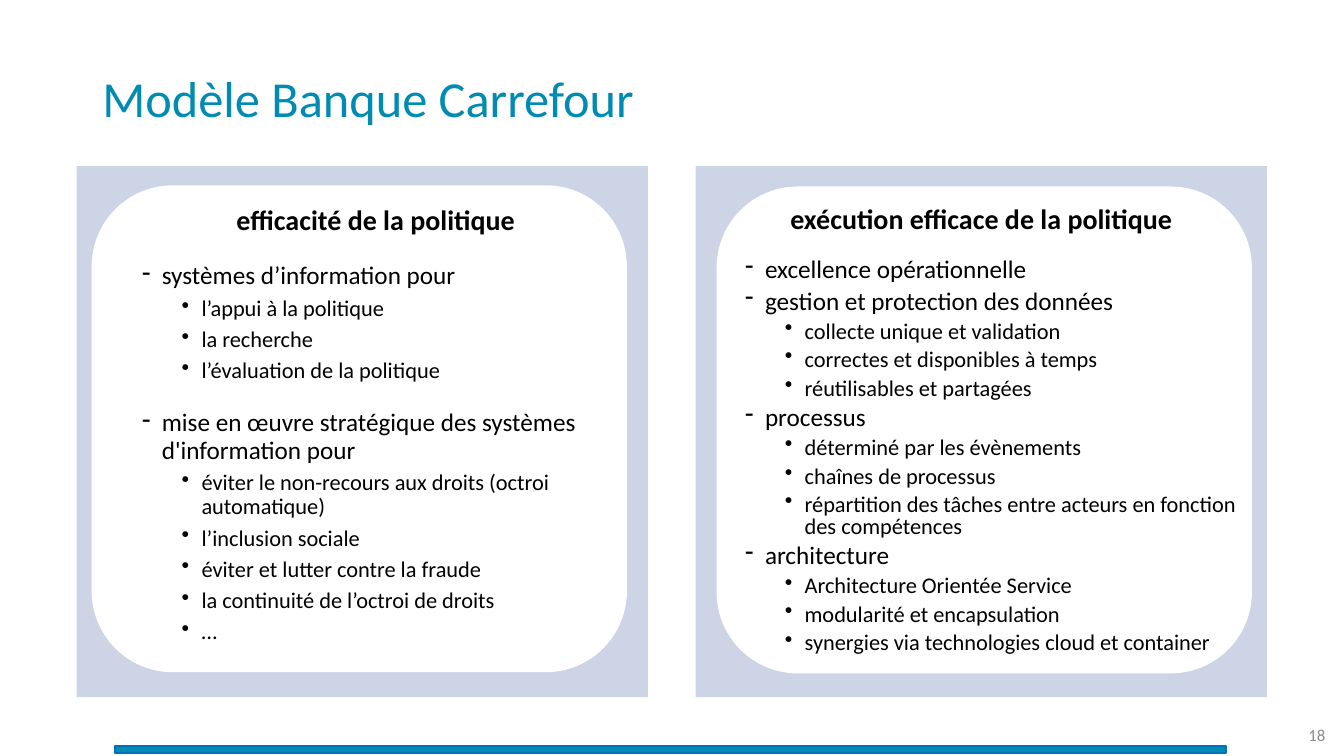
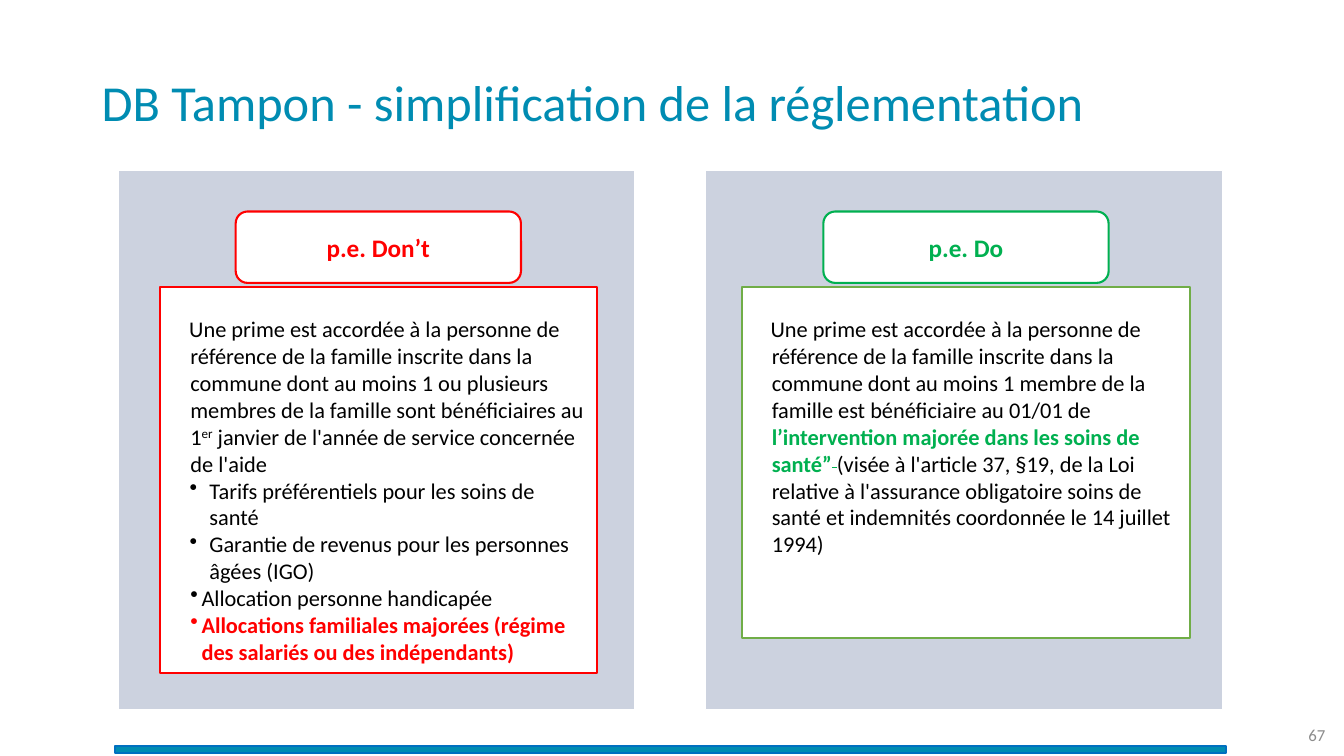
from dataclasses import dataclass, replace

from lxml import etree
from pptx import Presentation
from pptx.dml.color import RGBColor
from pptx.enum.shapes import MSO_SHAPE
from pptx.enum.text import MSO_ANCHOR, PP_ALIGN
from pptx.oxml.ns import qn
from pptx.util import Cm, Pt

RECTANGLE, ROUNDED = MSO_SHAPE.RECTANGLE, MSO_SHAPE.ROUNDED_RECTANGLE
TOP, MIDDLE = MSO_ANCHOR.TOP, MSO_ANCHOR.MIDDLE
LEFT, CENTER, RIGHT = PP_ALIGN.LEFT, PP_ALIGN.CENTER, PP_ALIGN.RIGHT

FONT = "Calibri"
COLORS = {
    "title": "008CB2",
    "bar_line": "0070C0",
    "number": "8C8C8C",
    "panel": "002B82",
    "rule_panel": "002060",
    "white": "FFFFFF",
    "text": "000000",
    "dont": "FF0000",
    "do": "00B050",
    "do_frame": "70AD47",
}


@dataclass(frozen=True)
class Area:
    left: float
    top: float
    width: float
    height: float


@dataclass(frozen=True)
class Span:
    text: str
    color: str = "text"
    bold: bool = False
    strike: bool = False
    superscript: bool = False


@dataclass(frozen=True)
class Style:
    size: float
    color: str = "text"
    bold: bool = False
    align: PP_ALIGN = LEFT
    indent: float = 0
    first: float = 0
    bullet: str = ""
    before: float = 0
    spacing: float = 1.0


@dataclass(frozen=True)
class Line:
    content: str | tuple[Span, ...]
    style: Style


@dataclass(frozen=True)
class Column:
    panel: Area
    card: Area
    body: Area
    lines: list[Line]


@dataclass(frozen=True)
class Example:
    panel_left: float
    label: str
    color: str
    frame: Area
    frame_color: str
    lines: list[Line]


TITLE = Style(36, "title", spacing=0.9)
NUMBER = Style(12, "number", align=RIGHT)
HEADING = Style(20, bold=True)
TOPIC = Style(18, indent=1.5, first=-0.5, bullet="-", before=5)
DETAIL = Style(16, indent=2.5, first=-0.5, bullet="•", before=5)
RULE = Style(16, indent=0.51, first=-0.03)
WIDE_BULLET = Style(16, indent=0.99, first=-0.5, bullet="•")
NARROW_BULLET = Style(16, indent=0.79, first=-0.28, bullet="•")


def rgb(name: str) -> RGBColor:
    return RGBColor.from_string(COLORS[name])


def write(frame, lines: list[Line], anchor: MSO_ANCHOR = TOP) -> None:
    frame.word_wrap = True
    frame.vertical_anchor = anchor
    for index, line in enumerate(lines):
        para = frame.add_paragraph() if index else frame.paragraphs[0]
        style = line.style
        properties = para._p.get_or_add_pPr()
        properties.set("marL", str(int(Cm(style.indent))))
        properties.set("indent", str(int(Cm(style.first))))
        if style.bullet:
            etree.SubElement(properties, qn("a:buChar")).set("char", style.bullet)
        para.alignment = style.align
        para.line_spacing = style.spacing
        para.space_before = Pt(style.before if index else 0)
        spans = line.content
        if isinstance(spans, str):
            spans = (Span(spans, style.color, style.bold),)
        for span in spans:
            run = para.add_run()
            run.text = span.text
            run.font.name = FONT
            run.font.size = Pt(style.size)
            run.font.bold = span.bold
            run.font.color.rgb = rgb(span.color)
            if span.strike:
                run._r.get_or_add_rPr().set("strike", "sngStrike")
            if span.superscript:
                run._r.get_or_add_rPr().set("baseline", "30000")


def add_text(page, area: Area, lines: list[Line], anchor: MSO_ANCHOR = TOP) -> None:
    box = page.shapes.add_textbox(
        Cm(area.left), Cm(area.top), Cm(area.width), Cm(area.height))
    write(box.text_frame, lines, anchor)


def add_box(page, kind: MSO_SHAPE, area: Area, fill: str, line: str = "",
            weight: float = 1, opacity: int = 100):
    box = page.shapes.add_shape(
        kind, Cm(area.left), Cm(area.top), Cm(area.width), Cm(area.height))
    box.shadow.inherit = False
    box.fill.solid()
    box.fill.fore_color.rgb = rgb(fill)
    if opacity < 100:
        color = box._element.spPr.find(qn("a:solidFill"))[0]
        etree.SubElement(color, qn("a:alpha")).set("val", str(opacity * 1000))
    if line:
        box.line.color.rgb = rgb(line)
        box.line.width = Pt(weight)
    else:
        box.line.fill.background()
    return box


def add_page(deck, title: str, title_area: Area, number: str):
    page = deck.slides.add_slide(deck.slide_layouts[6])
    add_box(page, RECTANGLE, Area(2.9, 18.8, 28, 0.18), "title", "bar_line")
    add_text(page, Area(31.57, 18.01, 2.08, 1.02), [Line(number, NUMBER)], MIDDLE)
    add_text(page, title_area, [Line(title, TITLE)], MIDDLE)
    return page


def outline(heading: Style, spacing: float, gap: float, title: str,
            topics: list[tuple[str, list[str]]], spaced: int) -> list[Line]:
    lines = [Line(title, replace(heading, spacing=spacing))]
    for index, (topic, details) in enumerate(topics):
        before = gap if index < spaced else TOPIC.before
        lines.append(Line(topic, replace(TOPIC, spacing=spacing, before=before)))
        lines += [Line(detail, replace(DETAIL, spacing=spacing)) for detail in details]
    return lines


POLICY = outline(
    replace(HEADING, indent=3.38), 0.9, 18.8, "efficacité de la politique", [
        ("systèmes d’information pour", [
            "l’appui à la politique",
            "la recherche",
            "l’évaluation de la politique",
        ]),
        ("mise en œuvre stratégique des systèmes d'information pour", [
            "éviter le non-recours aux droits (octroi automatique)",
            "l’inclusion sociale",
            "éviter et lutter contre la fraude",
            "la continuité de l’octroi de droits",
            "…",
        ]),
    ], spaced=2)

EXECUTION = outline(
    replace(HEADING, align=CENTER), 0.8, 17.8, "exécution efficace de la politique", [
        ("excellence opérationnelle", []),
        ("gestion et protection des données", [
            "collecte unique et validation",
            "correctes et disponibles à temps",
            "réutilisables et partagées",
        ]),
        ("processus", [
            "déterminé par les évènements",
            "chaînes de processus",
            "répartition des tâches entre acteurs en fonction des compétences",
        ]),
        ("architecture", [
            "Architecture Orientée Service",
            "modularité et encapsulation",
            "synergies via technologies cloud et container",
        ]),
    ], spaced=1)

COLUMNS = [
    Column(Area(1.93, 4.19, 14.4, 13.38), Area(2.31, 4.67, 13.49, 12.27),
           Area(2.33, 5.08, 14.4, 12.09), POLICY),
    Column(Area(17.53, 4.19, 14.4, 13.38), Area(18.06, 4.7, 13.49, 12.27),
           Area(17.53, 5.11, 14.4, 12.09), EXECUTION),
]

COMMON_RULE = ("Une prime est accordée à la personne de référence de la famille "
               "inscrite dans la commune dont au moins 1 ")

EXAMPLES = [
    Example(2.97, "p.e. Don’t", "dont", Area(4.04, 7.24, 11, 9.73), "dont", [
        Line((
            Span(COMMON_RULE + "ou plusieurs membres de la famille sont "
                 "bénéficiaires au 1"),
            Span("er", superscript=True),
            Span(" janvier de l'année de service concernée de l'aide"),
        ), RULE),
        Line("Tarifs préférentiels pour les soins de santé", WIDE_BULLET),
        Line("Garantie de revenus pour les personnes âgées (IGO)", WIDE_BULLET),
        Line("Allocation personne handicapée", NARROW_BULLET),
        Line("Allocations familiales majorées (régime des salariés ou des indépendants)",
             replace(NARROW_BULLET, color="dont", bold=True)),
    ]),
    Example(17.78, "p.e. Do", "do", Area(18.69, 7.24, 11.3, 8.84), "do_frame", [
        Line((
            Span(COMMON_RULE + "membre de la famille est bénéficiaire au 01/01 de "),
            Span("l’intervention majorée dans les soins de santé”", "do", bold=True),
            Span(" ", "do", bold=True, strike=True),
            Span("(visée à l'article 37, §19, de la Loi relative à l'assurance "
                 "obligatoire soins de santé et indemnités coordonnée le "
                 "14 juillet 1994)"),
        ), RULE),
    ]),
]


def draw_column(page, column: Column) -> None:
    add_box(page, RECTANGLE, column.panel, "panel", opacity=20)
    add_box(page, ROUNDED, column.card, "white")
    add_text(page, column.body, column.lines)


def draw_example(page, example: Example) -> None:
    add_box(page, RECTANGLE, Area(example.panel_left, 4.29, 13.03, 13.59),
            "rule_panel", "white", opacity=20)
    frame = add_box(page, RECTANGLE, example.frame, "white", example.frame_color, 1.5)
    frame.text_frame.margin_top = Cm(0.71)
    write(frame.text_frame, example.lines)
    label = add_box(page, ROUNDED, Area(example.panel_left + 2.97, 5.33, 7.19, 1.8),
                    "white", example.color, 1.5)
    style = Style(18, example.color, bold=True, align=CENTER)
    write(label.text_frame, [Line(example.label, style)], MIDDLE)


def main() -> None:
    deck = Presentation()
    deck.slide_width, deck.slide_height = Cm(33.87), Cm(19.05)
    page = add_page(deck, "Modèle Banque Carrefour", Area(2.33, 0.72, 29.2, 3.68), "18")
    for column in COLUMNS:
        draw_column(page, column)
    page = add_page(deck, "DB Tampon - simplification de la réglementation",
                    Area(2.31, 0.81, 29.2, 3.68), "67")
    for example in EXAMPLES:
        draw_example(page, example)
    deck.save("out.pptx")


if __name__ == "__main__":
    main()
